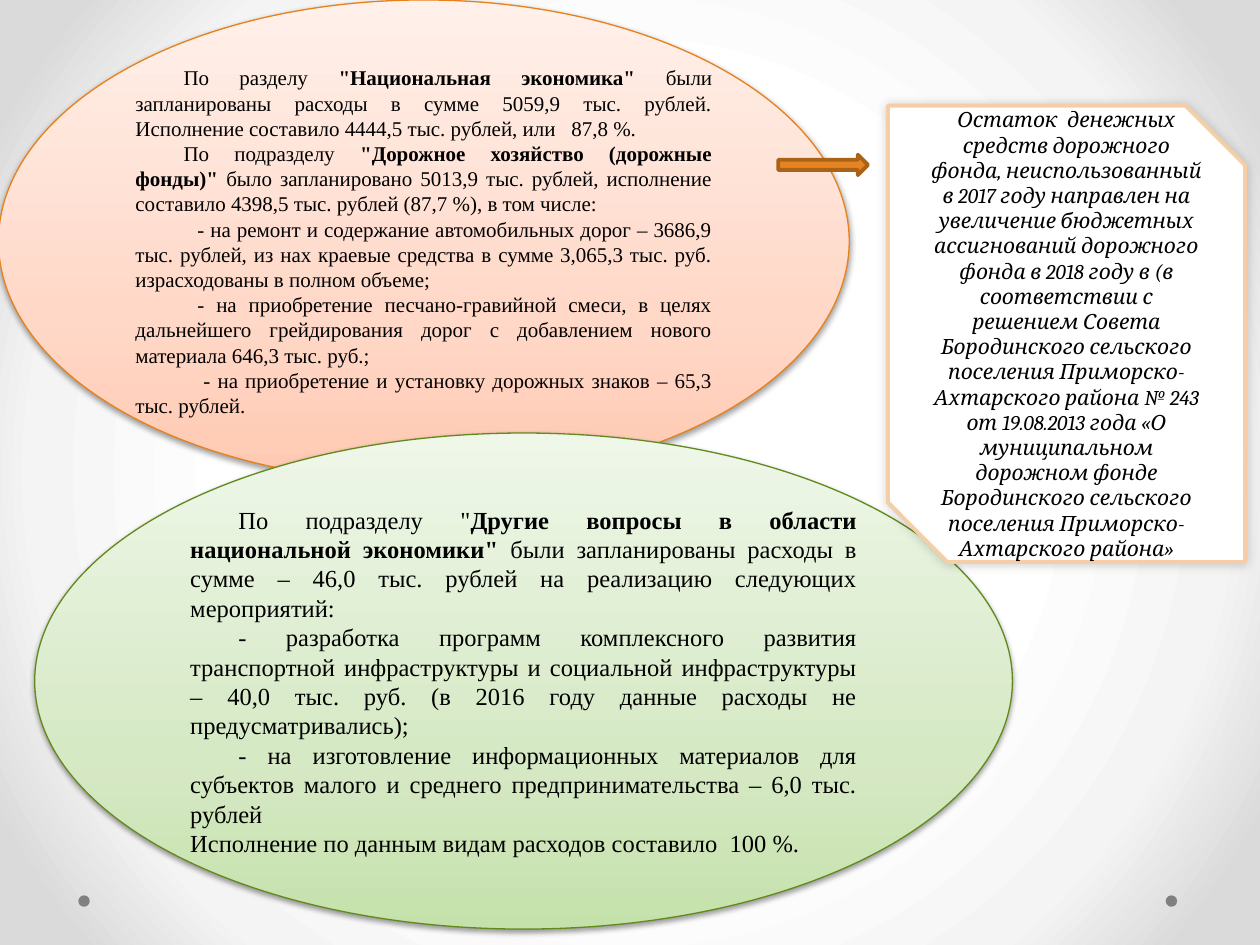
from lxml.etree import SubElement as Sub
from pptx import Presentation
from pptx.dml.color import RGBColor as RGB
from pptx.enum.shapes import MSO_SHAPE as Kind
from pptx.enum.text import MSO_ANCHOR as Anchor, PP_ALIGN as Align
from pptx.oxml.ns import qn
from pptx.util import Cm, Pt

BLACK = RGB(0, 0, 0)
WHITE = RGB(0xFF, 0xFF, 0xFF)
GRAY = RGB(0x80, 0x80, 0x80)
ORANGE = RGB(0xE6, 0x81, 0x1C)
GREEN = RGB(0x62, 0x89, 0x1C)
ARROW = RGB(0xE6, 0x84, 0x22)
BROWN = RGB(0xAA, 0x62, 0x19)
SAND = RGB(0xF5, 0xCE, 0xA7)
PEACH = [(0, RGB(0xFF, 0xC9, 0xB1)), (35, RGB(0xFF, 0xD8, 0xC8)),
         (100, RGB(0xFF, 0xF0, 0xEA))]
LEAF = [(0, RGB(0xC5, 0xE1, 0xAB)), (35, RGB(0xD6, 0xE9, 0xC5)),
        (100, RGB(0xEF, 0xF7, 0xE9))]
MIST = [(50, WHITE), (76, RGB(0xF4, 0xF4, 0xF4)), (92, RGB(0xDA, 0xDA, 0xDA))]

SERIF = "Times New Roman"
STEP = 0.97  # usual first-line indent, cm

# Paragraphs: first-line indent in cm, text with bold parts between bars
ROADS = [
    (STEP, 'По разделу |"Национальная экономика" |были запланированы расходы '
           'в сумме 5059,9 тыс. рублей. Исполнение составило 4444,5 тыс. '
           'рублей, или   87,8 %.'),
    (STEP, 'По подразделу| "Дорожное хозяйство (дорожные фонды)" |было '
           'запланировано 5013,9 тыс. рублей, исполнение составило 4398,5 '
           'тыс. рублей (87,7 %), в том числе:'),
    (1.25, '- на ремонт и содержание автомобильных дорог – 3686,9 тыс. '
           'рублей, из нах краевые средства в сумме 3,065,3 тыс. руб. '
           'израсходованы в полном объеме;'),
    (1.25, '- на приобретение песчано-гравийной смеси, в целях дальнейшего '
           'грейдирования дорог с добавлением нового материала 646,3 тыс. '
           'руб.;'),
    (1.37, '- на приобретение и установку дорожных знаков – 65,3 тыс. '
           'рублей.'),
]
OTHER = [
    (STEP, 'По подразделу "|Другие вопросы в области национальной экономики" '
           '|были запланированы расходы в сумме – 46,0 тыс. рублей на '
           'реализацию следующих мероприятий:'),
    (STEP, '- разработка программ комплексного развития транспортной '
           'инфраструктуры и социальной инфраструктуры – 40,0 тыс. руб. '
           '(в 2016 году данные расходы не предусматривались);'),
    (STEP, '- на изготовление информационных материалов для субъектов малого '
           'и среднего предпринимательства – 6,0 тыс. рублей'),
    (0, 'Исполнение по данным видам расходов составило  100 %.'),
]
REST = [
    (0, 'Остаток  денежных средств дорожного фонда, неиспользованный в 2017 '
        'году направлен на увеличение бюджетных ассигнований дорожного фонда '
        'в 2018 году в (в соответствии с решением Совета Бородинского '
        'сельского поселения Приморско-Ахтарского района № 243 от 19.08.2013 '
        'года «О муниципальном дорожном фонде Бородинского сельского '
        'поселения Приморско-Ахтарского района»'),
]


def blend(root, stops, round_=False):
    """Set the stops and direction of the gradient inside root."""
    grad = root.find(".//" + qn("a:gradFill"))
    for part in list(grad):
        grad.remove(part)
    row = Sub(grad, qn("a:gsLst"))
    for pos, tint in stops:
        stop = Sub(row, qn("a:gs"), pos=str(pos * 1000))
        Sub(stop, qn("a:srgbClr"), val=str(tint))
    if round_:
        way = Sub(grad, qn("a:path"), {"path": "circle"})
        Sub(way, qn("a:fillToRect"), l="50000", t="50000", r="50000", b="50000")
    else:
        Sub(grad, qn("a:lin"), ang="16200000", scaled="0")


def shade(shape, alpha, blur, dist, angle):
    """Add an outer shadow: percent, points, points, degrees."""
    box = shape._element.spPr.find(qn("a:effectLst"))
    drop = Sub(box, qn("a:outerShdw"), blurRad=str(Pt(blur)),
               dist=str(Pt(dist)), dir=str(angle * 60000), rotWithShape="0")
    tint = Sub(drop, qn("a:srgbClr"), val=str(BLACK))
    Sub(tint, qn("a:alpha"), val=str(alpha * 1000))


def add_form(slide, kind, at, fill, line=None, width=0.75):
    """Add a preset shape; a list as fill means a gradient."""
    shape = slide.shapes.add_shape(kind, *map(Cm, at))
    shape.shadow.inherit = False
    if isinstance(fill, list):
        shape.fill.gradient()
        blend(shape._element.spPr, fill)
    else:
        shape.fill.solid()
        shape.fill.fore_color.rgb = fill
    if line is None:
        shape.line.fill.background()
    else:
        shape.line.color.rgb = line
        shape.line.width = Pt(width)
    return shape


def write(shape, paras, size, font=SERIF, align=None, italic=None):
    """Fill a shape with text; indented paragraphs are justified."""
    frame = shape.text_frame
    frame.word_wrap = True
    frame.vertical_anchor = Anchor.MIDDLE
    for num, (indent, text) in enumerate(paras):
        para = frame.add_paragraph() if num else frame.paragraphs[0]
        para.alignment = align or (Align.JUSTIFY if indent else Align.LEFT)
        para._p.get_or_add_pPr().set("indent", str(Cm(indent)))
        for turn, part in enumerate(text.split("|")):
            run = para.add_run()
            run.text = part
            run.font.name = font
            run.font.size = Pt(size)
            run.font.bold = turn % 2 == 1
            run.font.italic = italic
            run.font.color.rgb = BLACK


def main():
    deck = Presentation()
    deck.slide_width, deck.slide_height = Cm(25.4), Cm(19.05)
    slide = deck.slides.add_slide(deck.slide_layouts[6])

    # Background and corner dots
    slide.background.fill.gradient()
    blend(slide.element, MIST, round_=True)
    for left in (23.5, 1.58):
        add_form(slide, Kind.OVAL, (left, 18.05, 0.23, 0.23), GRAY)

    # Budget ovals
    for at, fill, line, paras, size in (
            ((-0.03, 0, 17.15, 9.73), PEACH, ORANGE, ROADS, 12),
            ((0.7, 8.73, 19.71, 10), LEAF, GREEN, OTHER, 14)):
        oval = add_form(slide, Kind.OVAL, at, fill, line)
        shade(oval, 38, 3.1, 1.6, 90)
        write(oval, paras, size)

    # Arrow to the note on the unspent rest
    add_form(slide, Kind.RIGHT_ARROW, (15.69, 3.12, 1.81, 0.41),
             ARROW, BROWN, 2.25)
    note = add_form(slide, Kind.SNIP_2_DIAG_RECTANGLE,
                    (17.9, 2.13, 7.2, 9.2), WHITE, SAND, 2.25)
    shade(note, 20, 6, 0, 225)
    write(note, REST, 12, "Cambria", Align.CENTER, True)

    deck.save("out.pptx")


if __name__ == "__main__":
    main()
